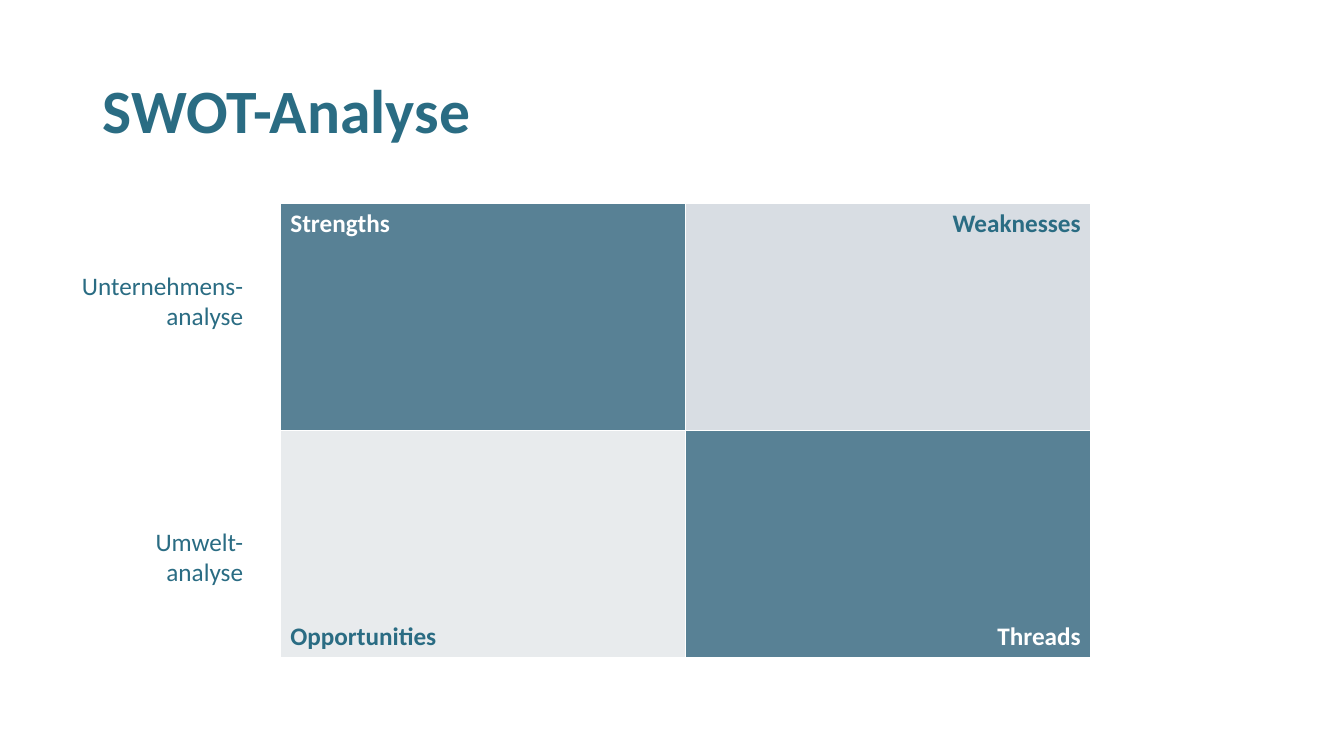
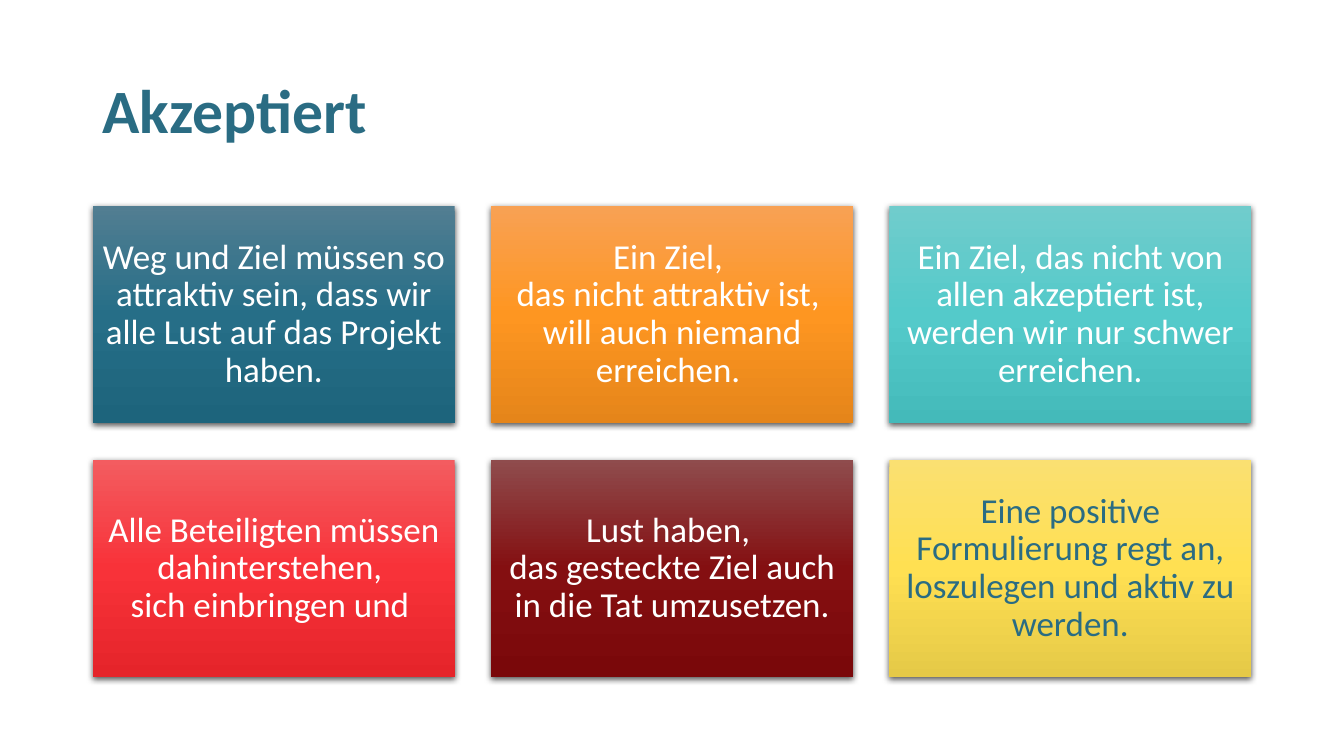
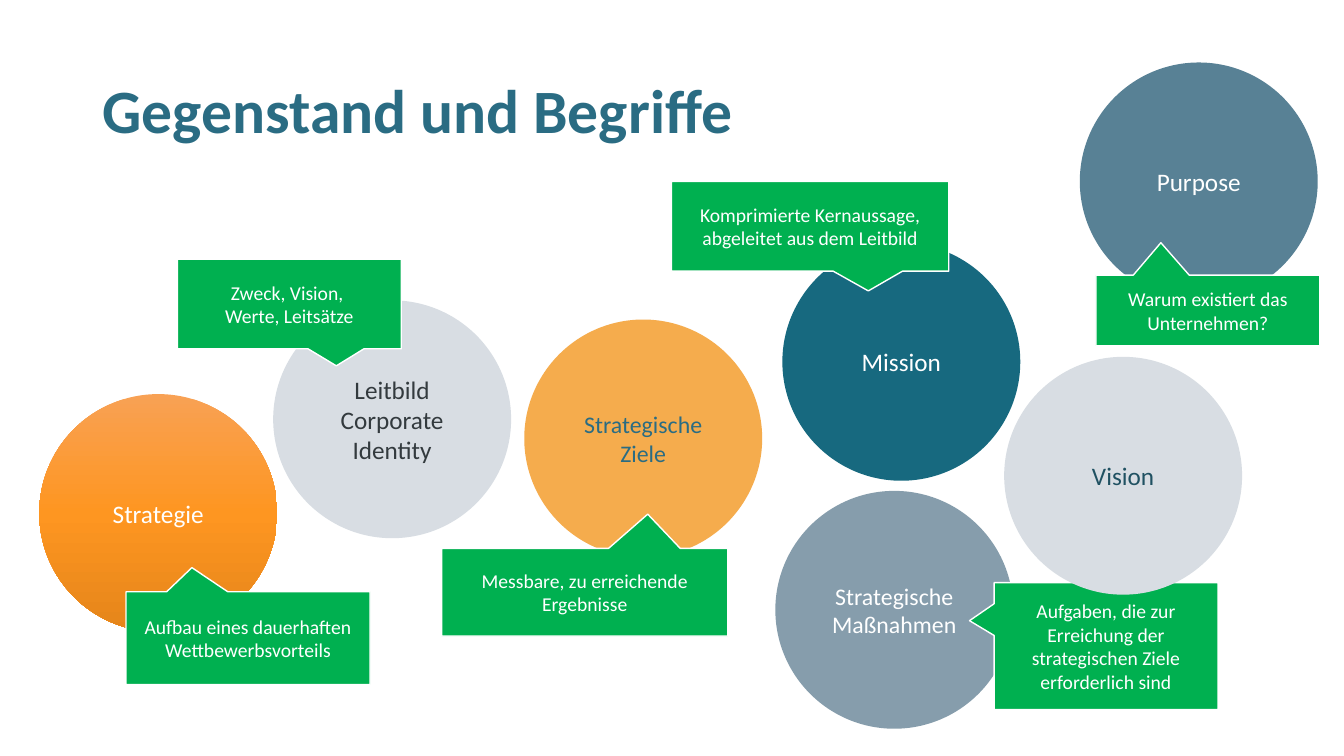
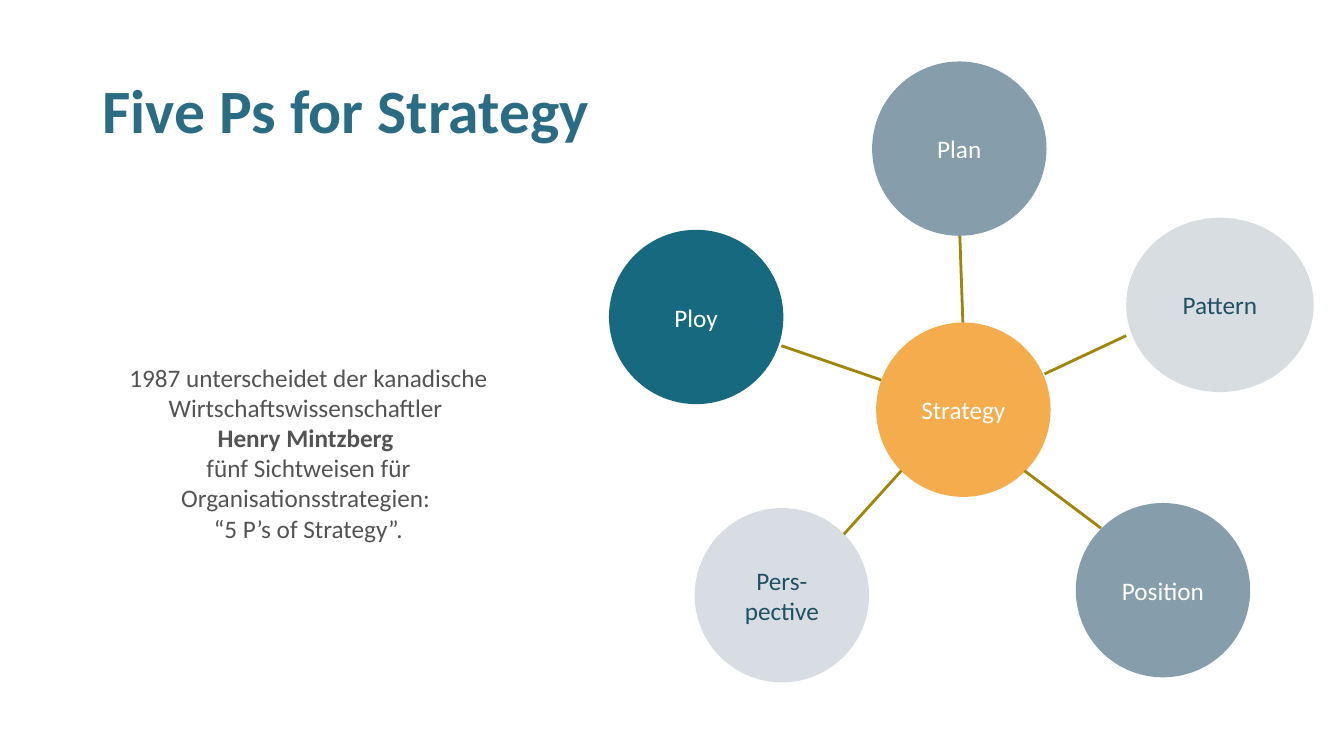
from copy import deepcopy
from dataclasses import dataclass

from lxml.etree import SubElement
from pptx import Presentation
from pptx.dml.color import RGBColor
from pptx.enum.shapes import MSO_CONNECTOR, MSO_SHAPE as Kind
from pptx.enum.text import MSO_ANCHOR as Anchor, PP_ALIGN as Align
from pptx.oxml.ns import qn
from pptx.util import Inches, Pt


@dataclass(frozen=True)
class Theme:
    font: str = "Calibri"
    head: int = 44
    card: int = 25
    body: int = 18
    tight: int = 17
    note: int = 14
    white: str = "FFFFFF"
    black: str = "000000"
    ink: str = "2A6C83"
    deep: str = "205162"
    coal: str = "333A3E"
    gray: str = "535353"
    slate: str = "588195"
    mist: str = "869DAC"
    teal: str = "17697F"
    pale: str = "D8DDE3"
    cloud: str = "D8DDE2"
    frost: str = "E8EBED"
    amber: str = "F5AC4D"
    green: str = "00B050"
    olive: str = "A18508"
    sea: tuple = ("527E92", "266E87", "1D647C")
    orange: tuple = ("F8A154", "FE9621", "E5851A")
    aqua: tuple = ("70CCCC", "54CACA", "44BABA")
    red: tuple = ("F35C60", "F83239", "E5242A")
    wine: tuple = ("8F4C4D", "840F11", "7A080A")
    gold: tuple = ("FAE071", "FFE052", "E5C947")


T = Theme()


def rgb(hue):
    return RGBColor.from_string(hue)


def write(frame, text, size=T.body, hue=T.white, bold=False, strong=None,
          align=Align.CENTER, anchor=Anchor.MIDDLE, space=None):
    frame.word_wrap = True
    frame.vertical_anchor = anchor
    lines = [text] if isinstance(text, str) else text
    for i, line in enumerate(lines):
        para = frame.add_paragraph() if i else frame.paragraphs[0]
        para.text = line
        para.alignment = align
        para.line_spacing = space
        for run in para.runs:
            font = run.font
            font.name, font.size = T.font, Pt(size)
            font.bold = bold or i == strong
            font.color.rgb = rgb(hue)


def paint(shape, hue):
    fill = shape.fill
    if isinstance(hue, str):
        fill.solid()
        fill.fore_color.rgb = rgb(hue)
        return
    fill.gradient()
    fill.gradient_angle = 270
    stops = next(shape._element.iter(qn("a:gsLst")))
    stops.append(deepcopy(stops[0]))
    for i, (stop, tone) in enumerate(zip(fill.gradient_stops, hue)):
        stop.position = i / 2
        stop.color.rgb = rgb(tone)


class Deck:
    def __init__(self):
        self.file = Presentation()
        self.file.slide_width = Inches(13.33)
        self.file.slide_height = Inches(7.5)

    def page(self, title):
        self.slide = self.file.slides.add_slide(self.file.slide_layouts[6])
        self.shapes = self.slide.shapes
        self.label((0.92, 0.4, 11.5, 1.45), title, size=T.head, hue=T.ink,
                   bold=True, align=Align.LEFT, anchor=Anchor.MIDDLE, space=0.9)

    def label(self, at, text, anchor=Anchor.TOP, **style):
        box = self.shapes.add_textbox(*map(Inches, at))
        write(box.text_frame, text, anchor=anchor, **style)

    def shape(self, kind, at, fill, text, edge=None, **style):
        shape = self.shapes.add_shape(kind, *map(Inches, at))
        paint(shape, fill)
        if edge:
            shape.line.color.rgb = rgb(edge)
            shape.line.width = Pt(1)
        else:
            shape.line.fill.background()
        shape.shadow.inherit = False
        write(shape.text_frame, text, **style)
        return shape

    def card(self, at, fill, text, hue):
        card = self.shape(Kind.RECTANGLE, at, fill, text, size=T.card, hue=hue, space=0.9)
        frame = card.text_frame
        frame.margin_top = frame.margin_bottom = Inches(0.1)
        glow = SubElement(card._element.spPr.find(qn("a:effectLst")), qn("a:outerShdw"),
                          blurRad=str(Pt(4.5)), dist=str(Pt(1.5)), dir="5400000",
                          algn="ctr", rotWithShape="0")
        tone = SubElement(glow, qn("a:srgbClr"), val=T.black)
        SubElement(tone, qn("a:alpha"), val="63000")

    def note(self, at, tip, text):
        note = self.shape(Kind.RECTANGULAR_CALLOUT, at, T.green, text,
                          edge=T.white, size=T.note)
        note.adjustments[0], note.adjustments[1] = tip

    def line(self, start, end):
        line = self.shapes.add_connector(MSO_CONNECTOR.STRAIGHT, *map(Inches, start + end))
        line.line.color.rgb = rgb(T.olive)
        line.line.width = Pt(2)
        SubElement(line._element.spPr, qn("a:effectLst"))

    def table(self, at, rows):
        grid = self.shapes.add_table(len(rows), len(rows[0]), *map(Inches, at)).table
        grid.first_row = grid.horz_banding = False
        for r, row in enumerate(rows):
            for c, (text, fill, hue) in enumerate(row):
                cell = grid.cell(r, c)
                self.frame(cell)
                paint(cell, fill)
                cell.vertical_anchor = Anchor.BOTTOM if r else Anchor.TOP
                write(cell.text_frame, text, hue=hue, bold=True, anchor=None,
                      align=Align.RIGHT if c else Align.LEFT)

    def frame(self, cell):
        props = cell._tc.get_or_add_tcPr()
        for side in "LRTB":
            edge = SubElement(props, qn(f"a:ln{side}"), w=str(Pt(1)))
            fill = SubElement(edge, qn("a:solidFill"))
            SubElement(fill, qn("a:srgbClr"), val=T.white)


def swot(deck):
    deck.page("SWOT-Analyse")
    deck.table((2.78, 2.02, 8.04, 4.5), [
        [("Strengths", T.slate, T.white), ("Weaknesses", T.pale, T.ink)],
        [("Opportunities", T.frost, T.ink), ("Threads", T.slate, T.white)],
    ])
    for top, text in ((2.63, "Unternehmens-analyse"), (5.17, ["Umwelt-", "analyse"])):
        deck.label((0.44, top, 2.07, 0.71), text, hue=T.ink, align=Align.RIGHT)


def goals(deck):
    deck.page("Akzeptiert")
    cards = [
        (T.sea, "Weg und Ziel müssen so attraktiv sein, dass wir alle Lust auf das Projekt haben."),
        (T.orange, "Ein Ziel, \ndas nicht attraktiv ist, \nwill auch niemand erreichen. "),
        (T.aqua, "Ein Ziel, das nicht von allen akzeptiert ist, werden wir nur schwer erreichen."),
        (T.red, "Alle Beteiligten müssen dahinterstehen, \nsich einbringen und "),
        (T.wine, "Lust haben, \ndas gesteckte Ziel auch in die Tat umzusetzen."),
        (T.gold, "Eine positive Formulierung regt an, loszulegen und aktiv zu werden."),
    ]
    wide, high, gap = 3.59, 2.16, 0.36
    for i, (fill, text) in enumerate(cards):
        row, col = divmod(i, 3)
        at = (0.92 + col * (wide + gap), 2.04 + row * (high + gap), wide, high)
        deck.card(at, fill, text, T.ink if fill == T.gold else T.white)


def terms(deck):
    deck.page("Gegenstand und Begriffe")

    def disc(left, top, fill, text, **style):
        deck.shape(Kind.OVAL, (left, top, 2.36, 2.36), fill, text, **style)

    disc(2.71, 2.98, T.pale, ["Leitbild", "Corporate Identity"], hue=T.coal)
    disc(7.76, 2.41, T.teal, "Mission")
    disc(10.71, 0.62, T.slate, "Purpose")
    disc(0.39, 3.91, T.orange, "Strategie")
    disc(5.2, 3.17, T.amber, "Strategische Ziele", size=T.tight, hue=T.ink)
    disc(7.69, 4.87, T.mist, "Strategische Maßnahmen", size=T.tight)
    notes = [
        ((6.66, 1.8, 2.75, 0.89), (0.21, 0.72),
         "Komprimierte Kernaussage, abgeleitet aus dem Leitbild"),
        ((10.87, 2.73, 2.22, 0.7), (-0.21, -0.96), "Warum existiert das Unternehmen?"),
        ((9.86, 5.78, 2.22, 1.26), (-0.61, -0.2),
         "Aufgaben, die zur Erreichung der strategischen Ziele erforderlich sind"),
        ((1.25, 5.87, 2.42, 0.92), (-0.23, -0.76),
         "Aufbau eines dauerhaften Wettbewerbsvorteils"),
        ((1.76, 2.57, 2.22, 0.89), (0.21, 0.69), ["Zweck, Vision, ", "Werte, Leitsätze"]),
        ((4.38, 5.44, 2.84, 0.87), (0.22, -0.89), "Messbare, zu erreichende Ergebnisse"),
    ]
    for at, tip, text in notes:
        deck.note(at, tip, text)
    disc(9.96, 3.54, T.pale, "Vision", hue=T.deep)


def five(deck):
    deck.page("Five Ps for Strategy")
    deck.label((1.06, 3.54, 4, 2.22), [
        "1987 unterscheidet der kanadische Wirtschaftswissenschaftler ",
        "Henry Mintzberg ",
        "fünf Sichtweisen für Organisationsstrategien: ",
        "“5 P’s of Strategy”.",
    ], hue=T.gray, strong=1)
    size = 1.73
    nodes = [
        (8.69, 3.2, size, T.amber, "Strategy", T.white),
        (8.65, 0.61, size, T.mist, "Plan", T.white),
        (11.17, 2.16, 1.86, T.cloud, "Pattern", T.deep),
        (6.89, 5.04, size, T.pale, "Pers-pective", T.deep),
        (10.67, 4.99, size, T.mist, "Position", T.white),
        (6.04, 2.28, size, T.teal, "Ploy", T.white),
    ]
    for left, top, wide, fill, text, hue in nodes:
        deck.shape(Kind.FLOWCHART_CONNECTOR, (left, top, wide, size), fill, text, hue=hue)
    for start, end in (
        ((9.52, 2.34), (9.55, 3.2)),
        ((7.75, 3.43), (8.74, 3.77)),
        ((8.37, 5.3), (8.94, 4.67)),
        ((10.92, 5.24), (10.16, 4.67)),
        ((10.36, 3.71), (11.17, 3.33)),
    ):
        deck.line(start, end)


def main():
    deck = Deck()
    for build in (swot, goals, terms, five):
        build(deck)
    deck.file.save("out.pptx")


if __name__ == "__main__":
    main()
